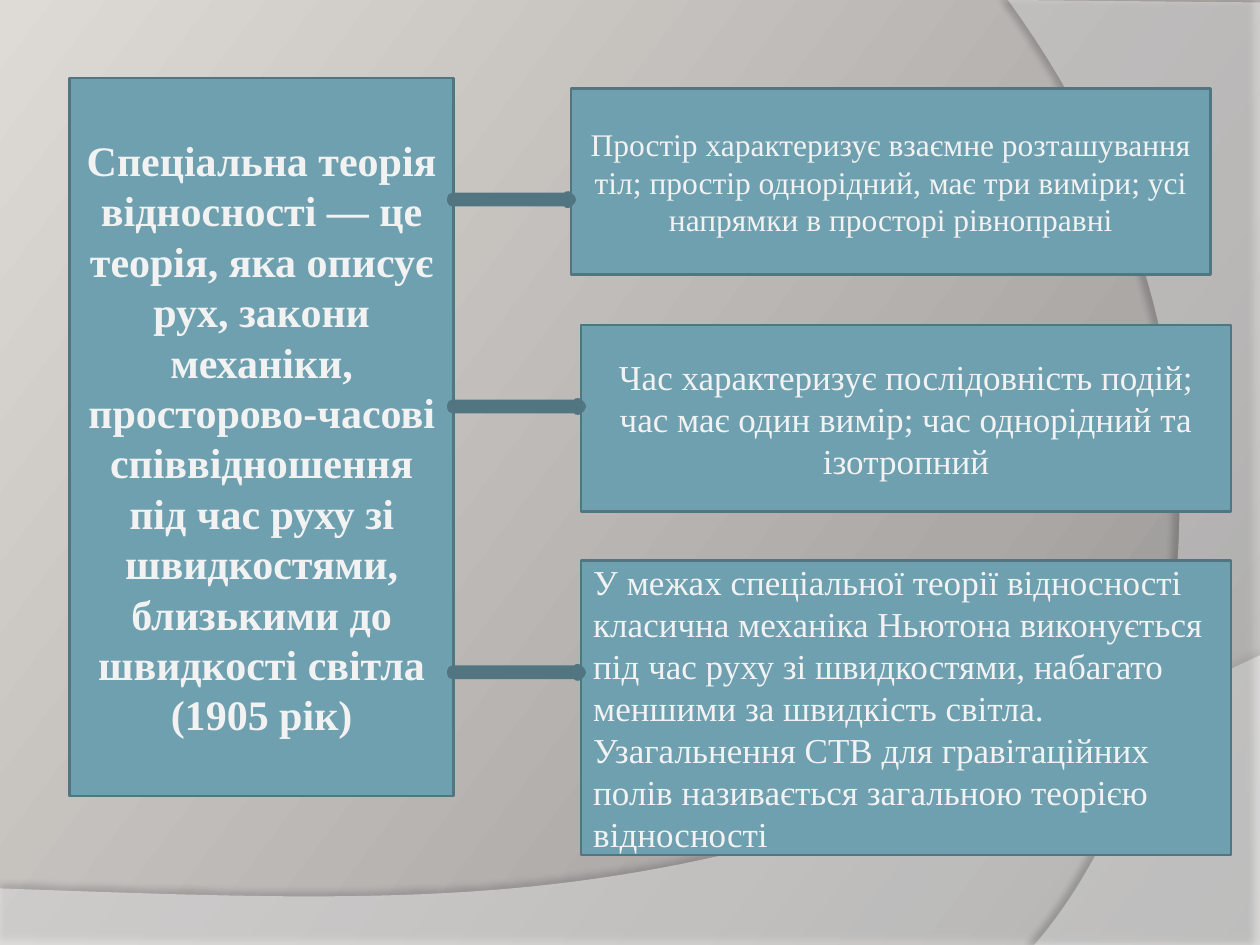
from copy import deepcopy

from lxml import etree
from pptx import Presentation
from pptx.dml.color import RGBColor
from pptx.enum.shapes import MSO_SHAPE
from pptx.enum.text import MSO_ANCHOR, PP_ALIGN
from pptx.oxml.ns import qn
from pptx.util import Cm, Pt

RECTANGLE, ARROW = MSO_SHAPE.RECTANGLE, MSO_SHAPE.RIGHT_ARROW
LEFT, CENTER = PP_ALIGN.LEFT, PP_ALIGN.CENTER
MIDDLE = MSO_ANCHOR.MIDDLE

THEME = {
    "font": "Times New Roman",
    "text": "F2F2F2",
    "fill": "6EA0B0",
    "line": "517682",
    "wave": "FFFFFF",
    "shadow": "000000",
    "background": [(0, "8F8D8B"), (30, "ABA8A6"), (100, "DEDBD7")],
    "angle": 143,
    "theory size": 24,
    "space size": 18,
    "body size": 20,
    "border": 1.5,
    "arrow border": 6,
}

WIDTH, HEIGHT = 25.4, 19.05

# Each wave: straight corners, then one Bezier curve (two controls and the end).
WAVES = [
    {"corners": [(0, 17.91), (0, HEIGHT), (WIDTH, HEIGHT), (WIDTH, 13.21)],
     "curve": [(14.2, 18.52), (9.93, 18.26), (0, 17.91)],
     "opacity": 45, "shadow": {"opacity": 35, "blur": 4, "distance": 3.5, "angle": 270}},
    {"corners": [(WIDTH, 0.05), (WIDTH, HEIGHT), (20.85, HEIGHT)],
     "curve": [(23.75, 15.72), (25.86, 7.62), (20.32, 0)],
     "opacity": 40, "shadow": {"opacity": 45, "blur": 4, "distance": 4, "angle": 180}},
]

THEORY = {
    "text": "Спеціальна теорія відносності — це теорія, яка описує рух, закони механіки, "
            "просторово-часові співвідношення під час руху зі швидкостями, близькими до "
            "швидкості світла (1905 рік)",
    "place": (1.4, 1.57, 7.75, 14.48), "size": "theory size", "align": CENTER, "bold": True,
}
STATEMENTS = [
    {"text": "Простір характеризує взаємне розташування тіл; простір однорідний, має три "
             "виміри; усі напрямки в просторі рівноправні",
     "place": (11.51, 1.78, 12.9, 3.76), "size": "space size", "align": CENTER,
     "arrow top": 3.96},
    {"text": "Час характеризує послідовність подій; час має один вимір; час однорідний та "
             "ізотропний",
     "place": (11.71, 6.55, 13.11, 3.76), "size": "body size", "align": CENTER,
     "arrow top": 8.13},
    {"text": "У межах спеціальної теорії відносності класична механіка Ньютона виконується "
             "під час руху зі швидкостями, набагато меншими за швидкість світла. "
             "Узагальнення СТВ для гравітаційних полів називається загальною теорією "
             "відносності",
     "place": (11.71, 11.3, 13.11, 5.94), "size": "body size", "align": LEFT,
     "arrow top": 13.49},
]
ARROW_LEFT, ARROW_HEIGHT = 9.12, 0.13
CURVE_STEPS = 60


def color(name):
    return RGBColor.from_string(THEME[name])


def set_all(target, values):
    for name, value in values.items():
        setattr(target, name, value)


def add_opacity(color_element, percent):
    etree.SubElement(color_element, qn("a:alpha")).set("val", str(percent * 1000))


def curve_points(start, first, second, end):
    """Sample a cubic Bezier curve, since freeforms take straight segments only."""
    points = []
    for step in range(1, CURVE_STEPS + 1):
        t = step / CURVE_STEPS
        weights = ((1 - t) ** 3, 3 * t * (1 - t) ** 2, 3 * t * t * (1 - t), t ** 3)
        points.append(tuple(
            sum(weight * value for weight, value in zip(weights, axis))
            for axis in zip(start, first, second, end)))
    return points


def paint_background(page):
    fill = page.background.fill
    fill.gradient()
    fill.gradient_angle = THEME["angle"]
    stops = page.background._cSld.find(".//" + qn("a:gsLst"))
    stops.append(deepcopy(stops[-1]))
    for stop, (position, value) in zip(fill.gradient_stops, THEME["background"]):
        stop.position = position / 100
        stop.color.rgb = RGBColor.from_string(value)


def add_wave(page, wave):
    corners = wave["corners"]
    points = corners + curve_points(corners[-1], *wave["curve"])
    lengths = [(Cm(x), Cm(y)) for x, y in points]
    builder = page.shapes.build_freeform(*lengths[0], scale=1.0)
    builder.add_line_segments(lengths[1:], close=True)
    shape = builder.convert_to_shape()
    shape.fill.solid()
    shape.fill.fore_color.rgb = color("wave")
    shape.line.fill.background()
    shape.shadow.inherit = False
    properties = shape._element.spPr
    add_opacity(properties.find(qn("a:solidFill"))[0], wave["opacity"])
    look = wave["shadow"]
    shadow = etree.SubElement(properties.find(qn("a:effectLst")), qn("a:outerShdw"), {
        "blurRad": str(Pt(look["blur"])), "dist": str(Pt(look["distance"])),
        "dir": str(look["angle"] * 60000), "algn": "ctr", "rotWithShape": "0"})
    shade = etree.SubElement(shadow, qn("a:srgbClr"), {"val": THEME["shadow"]})
    add_opacity(shade, look["opacity"])


def add_block(page, kind, place, border):
    shape = page.shapes.add_shape(kind, *map(Cm, place))
    shape.shadow.inherit = False
    shape.fill.solid()
    shape.fill.fore_color.rgb = color("fill")
    shape.line.color.rgb = color("line")
    shape.line.width = Pt(THEME[border])
    return shape


def add_text_block(page, content):
    frame = add_block(page, RECTANGLE, content["place"], "border").text_frame
    set_all(frame, {"word_wrap": True, "vertical_anchor": MIDDLE})
    para = frame.paragraphs[0]
    para.alignment = content["align"]
    span = para.add_run()
    span.text = content["text"]
    set_all(span.font, {"name": THEME["font"], "size": Pt(THEME[content["size"]]),
                        "bold": content.get("bold", False)})
    span.font.color.rgb = color("text")


def main():
    deck = Presentation()
    set_all(deck, {"slide_width": Cm(WIDTH), "slide_height": Cm(HEIGHT)})
    page = deck.slides.add_slide(deck.slide_layouts[6])
    paint_background(page)
    for wave in WAVES:
        add_wave(page, wave)
    for content in [THEORY, *STATEMENTS]:
        add_text_block(page, content)
    for statement in STATEMENTS:
        reach = statement["place"][0] - ARROW_LEFT
        place = (ARROW_LEFT, statement["arrow top"], reach, ARROW_HEIGHT)
        add_block(page, ARROW, place, "arrow border")
    deck.save("out.pptx")


if __name__ == "__main__":
    main()
